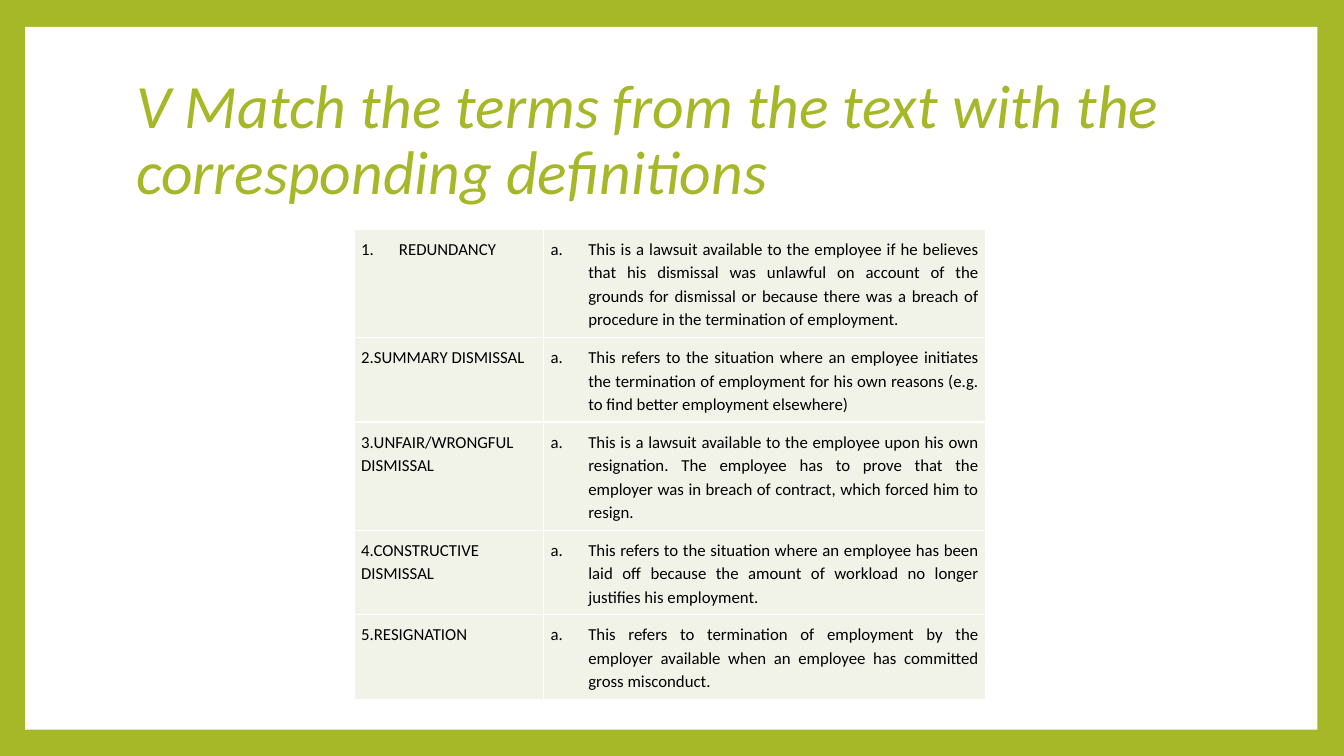
"""Build a slide with a table of employment terms and definitions."""
from lxml.etree import SubElement
from pptx import Presentation
from pptx.dml.color import RGBColor
from pptx.enum.shapes import MSO_SHAPE
from pptx.enum.text import MSO_ANCHOR, MSO_AUTO_SIZE, PP_ALIGN
from pptx.oxml.ns import qn
from pptx.util import Pt

TITLE = "V Match the terms from the text with the corresponding definitions"
ENTRIES = [
    ("REDUNDANCY",
     "This is a lawsuit available to the employee if he believes that his dismissal was "
     "unlawful on account of the grounds for dismissal or because there was a breach of "
     "procedure in the termination of employment.", 77),
    ("2.SUMMARY DISMISSAL",
     "This refers to the situation where an employee initiates the termination of "
     "employment for his own reasons (e.g. to find better employment elsewhere)", 60),
    ("3.UNFAIR/WRONGFUL DISMISSAL",
     "This is a lawsuit available to the employee upon his own resignation. The employee "
     "has to prove that the employer was in breach of contract, which forced him to "
     "resign.", 77),
    ("4.CONSTRUCTIVE DISMISSAL",
     "This refers to the situation where an employee has been laid off because the amount "
     "of workload no longer justifies his employment.", 60),
    ("5.RESIGNATION",
     "This refers to termination of employment by the employer available when an employee "
     "has committed gross misconduct.", 60),
]
COLUMN_WIDTHS = (135.25, 316)
GREEN, WHITE, BLACK, PALE = "A6B727", "FFFFFF", "000000", "F1F3E8"
FONT = "Calibri"
CELL_INSET = 5
NUMBER_INDENT = 27


def paint(fill, color):
    fill.solid()
    fill.fore_color.rgb = RGBColor.from_string(color)


def style_font(font, size, color):
    font.name, font.size = FONT, Pt(size)
    font.color.rgb = RGBColor.from_string(color)


def number_paragraph(paragraph, scheme):
    properties = paragraph._p.get_or_add_pPr()
    properties.set("marL", str(Pt(NUMBER_INDENT)))
    properties.set("indent", str(-Pt(NUMBER_INDENT)))
    SubElement(properties, qn("a:buFont"), typeface="+mj-lt")
    SubElement(properties, qn("a:buAutoNum"), type=scheme)


def add_borders(cell):
    properties = cell._tc.get_or_add_tcPr()
    for side in ("lnL", "lnR", "lnT", "lnB"):
        line = SubElement(properties, qn(f"a:{side}"), w=str(Pt(1)))
        fill = SubElement(line, qn("a:solidFill"))
        SubElement(fill, qn("a:srgbClr"), val=WHITE)


def fill_cell(cell, text, scheme):
    add_borders(cell)
    paint(cell.fill, PALE)
    cell.margin_left = cell.margin_right = Pt(CELL_INSET)
    cell.margin_top = cell.margin_bottom = Pt(CELL_INSET)
    cell.text = text
    paragraph = cell.text_frame.paragraphs[0]
    paragraph.alignment = PP_ALIGN.JUSTIFY
    paragraph.line_spacing = 1.15
    if scheme:
        number_paragraph(paragraph, scheme)
    style_font(paragraph.font, 12, BLACK)


def add_panel(slide):
    panel = slide.shapes.add_shape(
        MSO_SHAPE.RECTANGLE, Pt(18), Pt(19.2), Pt(923), Pt(502))
    panel.shadow.inherit = False
    paint(panel.fill, WHITE)
    panel.line.fill.background()
    return panel


def format_title(title):
    title.left, title.top, title.width, title.height = Pt(90), Pt(48), Pt(777.6), Pt(106.5)
    frame = title.text_frame
    frame.text = TITLE
    frame.word_wrap = True
    frame.auto_size = MSO_AUTO_SIZE.NONE
    frame.vertical_anchor = MSO_ANCHOR.MIDDLE
    paragraph = frame.paragraphs[0]
    paragraph.alignment = PP_ALIGN.LEFT
    paragraph.line_spacing = 0.9
    style_font(paragraph.font, 44, GREEN)
    paragraph.font.italic = True


def add_terms_table(slide):
    heights = [height for _, _, height in ENTRIES]
    table = slide.shapes.add_table(
        len(ENTRIES), len(COLUMN_WIDTHS), Pt(253), Pt(163.8),
        Pt(sum(COLUMN_WIDTHS)), Pt(sum(heights))).table
    table.first_row = table.horz_banding = False
    for column, width in zip(table.columns, COLUMN_WIDTHS):
        column.width = Pt(width)
    for index, (term, definition, height) in enumerate(ENTRIES):
        table.rows[index].height = Pt(height)
        fill_cell(table.cell(index, 0), term, "arabicPeriod" if index == 0 else None)
        fill_cell(table.cell(index, 1), definition, "alphaLcPeriod")


def main():
    presentation = Presentation()
    presentation.slide_width, presentation.slide_height = Pt(960), Pt(540)
    slide = presentation.slides.add_slide(presentation.slide_layouts[5])
    paint(slide.background.fill, GREEN)
    title = slide.shapes.title
    format_title(title)
    add_panel(slide).element.addnext(title.element)
    add_terms_table(slide)
    presentation.save("out.pptx")


if __name__ == "__main__":
    main()
